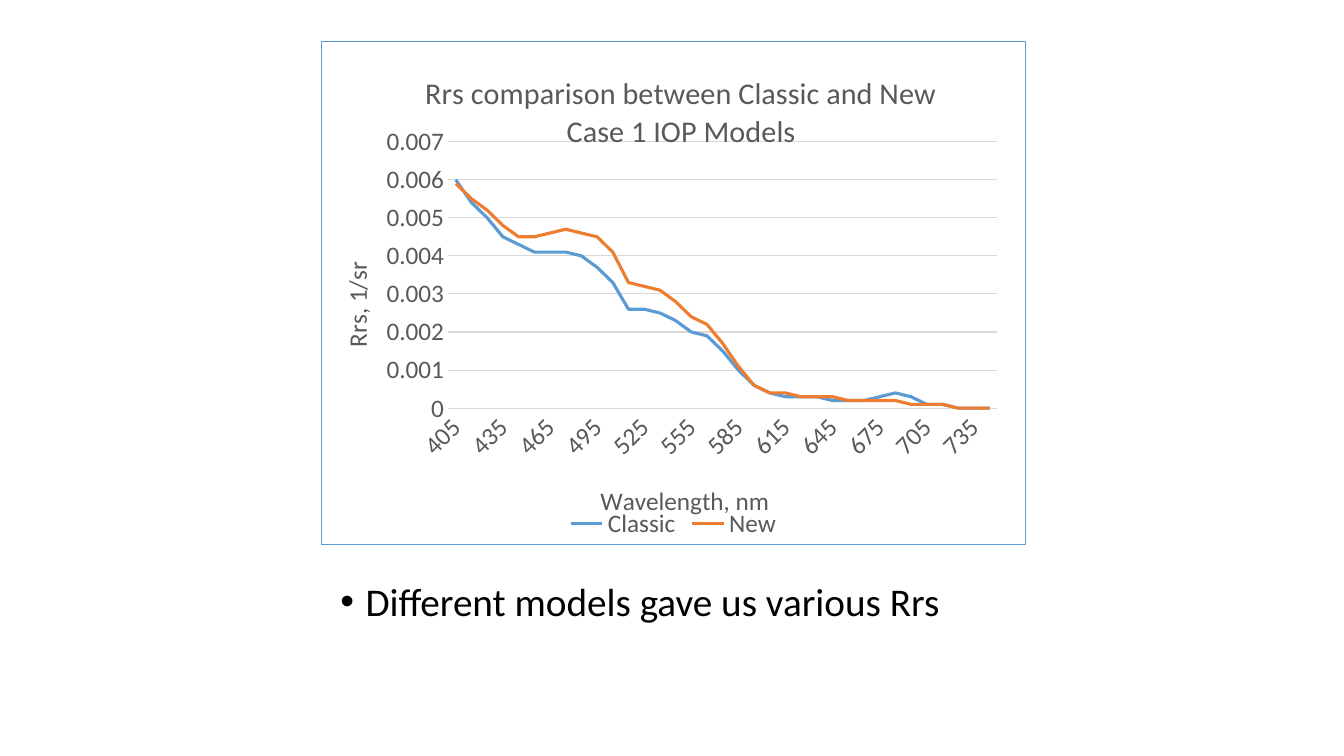
import pptx
import pptx.util
import pptx.dml.color
import pptx.chart.data
import pptx.enum.chart
import pptx.oxml
import pptx.oxml.ns
from dataclasses import dataclass

Pt = pptx.util.Pt
qn = pptx.oxml.ns.qn
enum = pptx.enum.chart


@dataclass(frozen=True)
class Theme:
    font: str = "Calibri"
    ink: str = "000000"
    grey: str = "595959"
    grid: str = "D9D9D9"
    blue: str = "5B9BD5"
    orange: str = "ED7D31"
    body: float = 28
    title: float = 21.6
    label: float = 18
    thin: float = 0.75
    thick: float = 2.25


THEME = Theme()
WAVES = [str(wave) for wave in range(405, 746, 10)]
SCALE = 10000
CLASSIC = [60, 54, 50, 45, 43, 41, 41, 41, 40, 37, 33, 26, 26, 25, 23, 20, 19, 15,
           10, 6, 4, 3, 3, 3, 2, 2, 2, 3, 4, 3, 1, 1, 0, 0, 0]
NEW = [59, 55, 52, 48, 45, 45, 46, 47, 46, 45, 41, 33, 32, 31, 28, 24, 22, 17,
       11, 6, 4, 4, 3, 3, 3, 2, 2, 2, 2, 1, 1, 1, 0, 0, 0]


def color(code):
    return pptx.dml.color.RGBColor.from_string(code)


def style(font, size=THEME.label, code=THEME.grey):
    font.name = THEME.font
    font.size = Pt(size)
    font.bold = False
    font.color.rgb = color(code)


def stroke(line, code, width):
    line.color.rgb = color(code)
    line.width = Pt(width)


def write(frame, text, **form):
    para = frame.paragraphs[0]
    run = para.add_run()
    run.text = text
    style(run.font, **form)
    return para


def node(tag, **attrs):
    part = pptx.oxml.parse_xml(f"<{tag} {pptx.oxml.ns.nsdecls('a', 'c')}/>")
    for name, value in attrs.items():
        part.set(name, str(value))
    return part


def place(owner, inner=False, **spots):
    for old in owner.findall(qn("c:layout")):
        owner.remove(old)
    layout = node("c:layout")
    manual = node("c:manualLayout")
    layout.append(manual)
    if inner:
        manual.append(node("c:layoutTarget", val="inner"))
    for name in ("x", "y"):
        manual.append(node(f"c:{name}Mode", val="edge"))
    for name, value in spots.items():
        manual.append(node(f"c:{name}", val=value))
    text = owner.find(qn("c:tx"))
    if text is None:
        owner.insert(0, layout)
    else:
        text.addnext(layout)


def head(owner, text, x, y, size=THEME.label, turn=0):
    owner.has_title = True
    title = owner.chart_title if hasattr(owner, "chart_title") else owner.axis_title
    frame = title.text_frame
    write(frame, text, size=size)
    body = frame._txBody.find(qn("a:bodyPr"))
    body.set("rot", str(turn * 60000))
    body.set("vert", "horz")
    place(title._element, x=x, y=y)


def tune(axis):
    axis.major_tick_mark = enum.XL_TICK_MARK.NONE
    axis.minor_tick_mark = enum.XL_TICK_MARK.NONE
    style(axis.tick_labels.font)


def edge(chart):
    root = chart._chartSpace
    shape = node("c:spPr")
    line = node("a:ln", w=int(Pt(THEME.thin)))
    for owner, code in ((shape, "FFFFFF"), (line, THEME.blue)):
        fill = node("a:solidFill")
        fill.append(node("a:srgbClr", val=code))
        owner.append(fill)
    shape.append(line)
    root.find(qn("c:chart")).addnext(shape)


def plot(slide, left, top, width, height):
    data = pptx.chart.data.CategoryChartData(number_format="General")
    data.categories = WAVES
    for name, marks in (("Classic", CLASSIC), ("New", NEW)):
        data.add_series(name, [mark / SCALE for mark in marks])
    chart = slide.shapes.add_chart(enum.XL_CHART_TYPE.LINE, Pt(left), Pt(top),
                                   Pt(width), Pt(height), data).chart
    style(chart.font)
    edge(chart)
    head(chart, "Rrs comparison between Classic and New Case 1 IOP Models",
         0.14, 0.05, size=THEME.title)
    place(chart._chartSpace.find(".//" + qn("c:plotArea")), inner=True,
          x=0.18, y=0.2, w=0.78, h=0.53)
    chart.plots[0].vary_by_categories = False
    for line, code in zip(chart.plots[0].series, (THEME.blue, THEME.orange)):
        line.smooth = False
        line.marker.style = enum.XL_MARKER_STYLE.NONE
        stroke(line.format.line, code, THEME.thick)
    waves, rates = chart.category_axis, chart.value_axis
    for axis in (waves, rates):
        tune(axis)
    head(waves, "Wavelength, nm", 0.39, 0.87)
    head(rates, "Rrs, 1/sr", 0.02, 0.43, turn=-90)
    stroke(waves.format.line, THEME.grid, THEME.thin)
    waves._element.find(qn("c:txPr")).find(qn("a:bodyPr")).set("rot", str(-45 * 60000))
    waves._element.find(qn("c:noMultiLvlLbl")).addprevious(node("c:tickLblSkip", val=3))
    rates.minimum_scale, rates.maximum_scale = 0, 0.007
    rates.major_unit = 0.001
    rates.format.line.fill.background()
    stroke(rates.major_gridlines.format.line, THEME.grid, THEME.thin)
    chart.has_legend = True
    chart.legend.position = enum.XL_LEGEND_POSITION.BOTTOM
    chart.legend.include_in_layout = False
    style(chart.legend.font)


def point(slide, text, left, top, width, height):
    frame = slide.shapes.add_textbox(Pt(left), Pt(top), Pt(width), Pt(height)).text_frame
    frame.word_wrap = True
    para = write(frame, text, size=THEME.body, code=THEME.ink)
    para.line_spacing = 0.9
    para.space_before = Pt(10)
    props = para._p.get_or_add_pPr()
    props.set("marL", str(int(Pt(18))))
    props.set("indent", str(int(Pt(-18))))
    props.append(node("a:buFont", typeface="Arial"))
    props.append(node("a:buChar", char="•"))


def main():
    deck = pptx.Presentation()
    deck.slide_width, deck.slide_height = Pt(960), Pt(540)
    slide = deck.slides.add_slide(deck.slide_layouts[6])
    plot(slide, 229, 29, 504, 360)
    point(slide, "Different models gave us various Rrs", 236, 412.5, 461.5, 82)
    deck.save("out.pptx")


if __name__ == "__main__":
    main()
